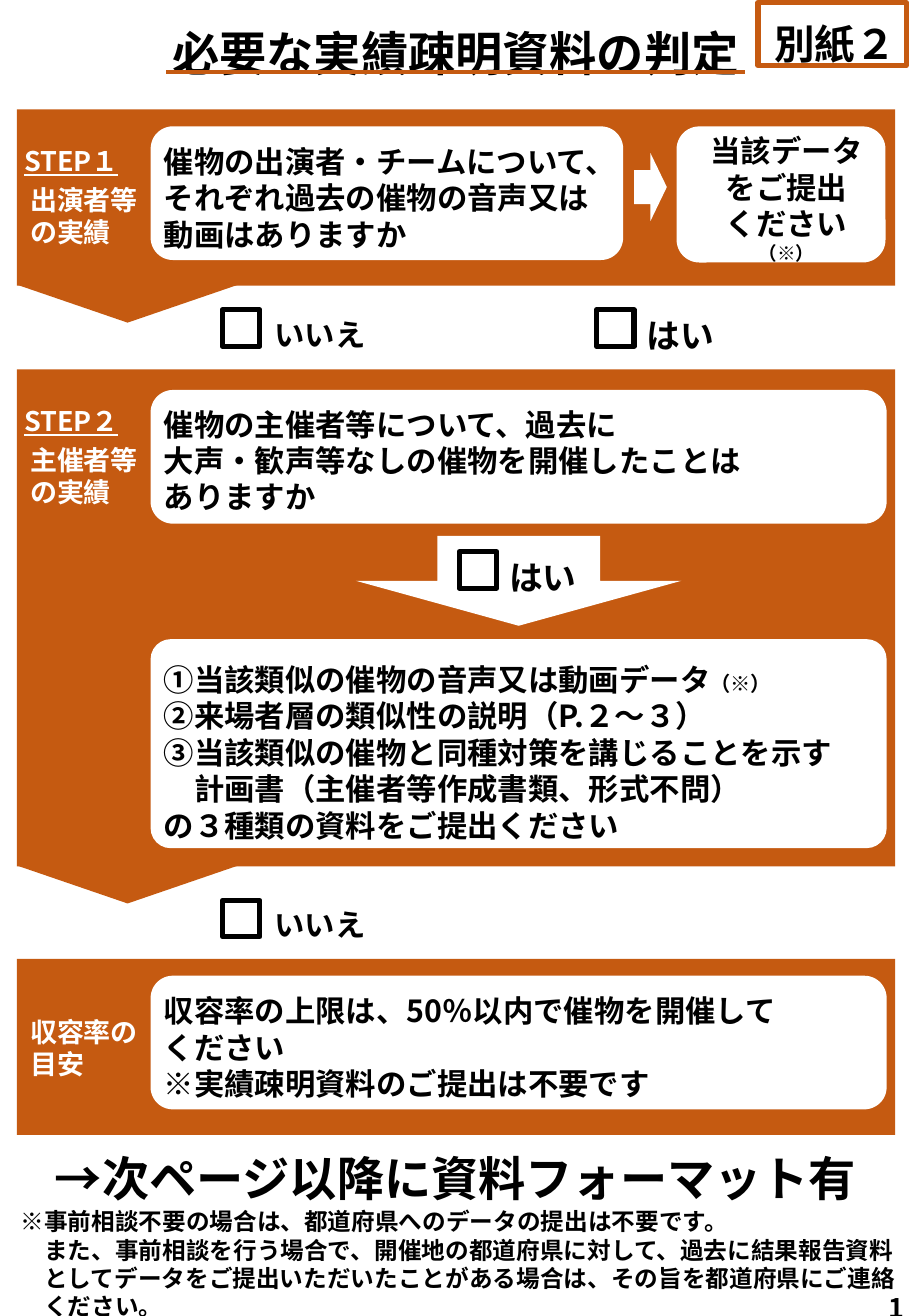
from lxml.etree import SubElement
from pptx import Presentation
from pptx.dml.color import RGBColor
from pptx.enum.shapes import MSO_CONNECTOR, MSO_SHAPE
from pptx.enum.text import PP_ALIGN
from pptx.oxml.ns import qn
from pptx.util import Inches, Pt

COLORS = {"orange": "C55A11", "white": "FFFFFF", "black": "000000"}
FONT = "Noto Sans CJK JP"


class Page:
    def __init__(self, prs):
        self.s = prs.slides.add_slide(prs.slide_layouts[6])

    def color(self, name):
        return RGBColor.from_string(COLORS[name])

    def shape(self, kind, x, y, w, h, fill=None, line=None, rotation=0, adj=None):
        sp = self.s.shapes.add_shape(kind, Inches(x), Inches(y), Inches(w), Inches(h))
        sp.shadow.inherit = False
        sp.rotation = rotation
        if adj is not None:
            sp.adjustments[0] = adj
        if fill:
            sp.fill.solid()
            sp.fill.fore_color.rgb = self.color(fill)
        else:
            sp.fill.background()
        if line:
            sp.line.color.rgb = self.color(line)
            sp.line.width = Pt(3)
        else:
            sp.line.fill.background()

    def line(self, x1, y1, x2, y2):
        ln = self.s.shapes.add_connector(
            MSO_CONNECTOR.STRAIGHT, Inches(x1), Inches(y1), Inches(x2), Inches(y2))
        ln.line.color.rgb = self.color("orange")
        ln.line.width = Pt(2.25)
        SubElement(ln._element.spPr, qn("a:effectLst"))

    def run(self, p, text, size, color, underline=False):
        r = p.add_run()
        r.text = text
        r.font.name = FONT
        r.font.size = Pt(size)
        r.font.bold = True
        r.font.underline = underline
        r.font.color.rgb = self.color(color)
        r.font._element.find(qn("a:latin")).addnext(
            r.font._element.makeelement(qn("a:ea"), {"typeface": FONT}))

    def text(self, x, y, w, h, paragraphs, size=18, color="black", center=False):
        tb = self.s.shapes.add_textbox(Inches(x), Inches(y), Inches(w), Inches(h))
        tf = tb.text_frame
        tf.word_wrap = True
        tf.margin_top = Inches(0.05 + size / 1000)
        for i, runs in enumerate(paragraphs):
            p = tf.paragraphs[0] if i == 0 else tf.add_paragraph()
            p.alignment = PP_ALIGN.CENTER if center else PP_ALIGN.LEFT
            runs = [(runs, size)] if isinstance(runs, str) else runs
            p.line_spacing = Pt(1.2 * max(run[1] for run in runs))
            for text, run_size in runs:
                underline = text.startswith("STEP")
                self.run(p, text, run_size, color, underline)
                if underline:
                    p.space_after = Pt(4)

    def panel(self, y, h, pointer=False):
        if pointer:
            self.shape(MSO_SHAPE.PENTAGON, 0.74, y + h - 0.91, 0.62, 1.81,
                       "orange", rotation=90)
        self.shape(MSO_SHAPE.RECTANGLE, 0.14, y, 7.23, h, "orange")

    def card(self, x, y, w, h, adj=None):
        self.shape(MSO_SHAPE.ROUNDED_RECTANGLE, x, y, w, h, "white", adj=adj)

    def heading(self, y, h, paragraphs):
        self.text(0.1, y, 1.19, h, paragraphs, 16, "white")

    def choice(self, x, y, label):
        self.shape(MSO_SHAPE.RECTANGLE, x, y, 0.31, 0.3, line="black")
        if label == "はい":
            self.text(x + 0.22, y - 0.03, 0.94, 0.44, [label], 20, center=True)
        else:
            self.text(x + 0.17, y - 0.02, 1.27, 0.4, [label], center=True)


def main():
    prs = Presentation()
    prs.slide_width, prs.slide_height = Inches(7.5), Inches(10.83)
    page = Page(prs)

    page.text(0.48, 0.12, 6.54, 0.57, ["必要な実績疎明資料の判定"], 28, center=True)
    page.line(1.37, 0.59, 6.13, 0.59)
    page.text(6.06, 0.08, 1.63, 0.5, ["別紙２"], 24, center=True)
    page.shape(MSO_SHAPE.RECTANGLE, 6.24, 0.02, 1.22, 0.52, line="orange")

    page.panel(0.9, 1.45, pointer=True)
    page.card(1.24, 1.04, 3.89, 1.1)
    page.card(5.57, 1.04, 1.72, 1.12)
    page.heading(1.12, 0.96, ["STEP１", " 出演者等", " の実績"])
    page.shape(MSO_SHAPE.RIGHT_ARROW, 5.22, 1.26, 0.27, 0.56, "white")
    page.text(1.25, 1.11, 3.9, 1.01, [
        "催物の出演者・チームについて、",
        "それぞれ過去の催物の音声又は動画はありますか"])
    page.text(5.49, 1.02, 1.97, 1.19, [
        "当該データ", "をご提出", "ください", [("（※）", 11)]], center=True)
    page.choice(4.91, 2.55, "はい")
    page.choice(1.83, 2.55, "いいえ")

    page.panel(3.04, 4.09, pointer=True)
    page.card(1.24, 3.21, 6.06, 1.1)
    page.card(1.24, 5.26, 6.06, 1.72, adj=0.096)
    page.heading(3.26, 0.96, ["STEP２", " 主催者等", " の実績"])
    page.shape(MSO_SHAPE.RIGHT_ARROW, 3.9, 3.44, 0.74, 2.68, "white", rotation=90)
    page.text(1.25, 3.27, 6.05, 1.01, [
        "催物の主催者等について、過去に",
        "大声・歓声等なしの催物を開催したことは",
        "ありますか"])
    page.text(1.25, 5.37, 6.08, 1.62, [
        [("①当該類似の催物の音声又は動画データ", 18), ("（※）", 12)],
        "②来場者層の類似性の説明（P.２～３）",
        "③当該類似の催物と同種対策を講じることを示す",
        "　計画書（主催者等作成書類、形式不問）",
        "の３種類の資料をご提出ください"])
    page.choice(3.78, 4.54, "はい")
    page.choice(1.83, 7.41, "いいえ")

    page.panel(7.89, 1.45)
    page.card(1.24, 8.03, 6.06, 1.1)
    page.heading(8.29, 0.64, [" 収容率の", " 目安"])
    page.text(1.25, 8.1, 5.96, 1.01, [
        "収容率の上限は、50％以内で催物を開催して",
        "ください",
        "※実績疎明資料のご提出は不要です"])

    page.text(0.31, 9.38, 6.88, 0.57, ["→次ページ以降に資料フォーマット有"], 28, center=True)
    page.text(0.07, 9.87, 7.43, 1.04, [
        "※事前相談不要の場合は、都道府県へのデータの提出は不要です。",
        "　また、事前相談を行う場合で、開催地の都道府県に対して、過去に結果報告資料",
        "　としてデータをご提出いただいたことがある場合は、その旨を都道府県にご連絡",
        "　ください。"], 14)
    page.text(7.22, 10.56, 0.59, 0.37, ["1"], 16)

    prs.save("out.pptx")


if __name__ == "__main__":
    main()
